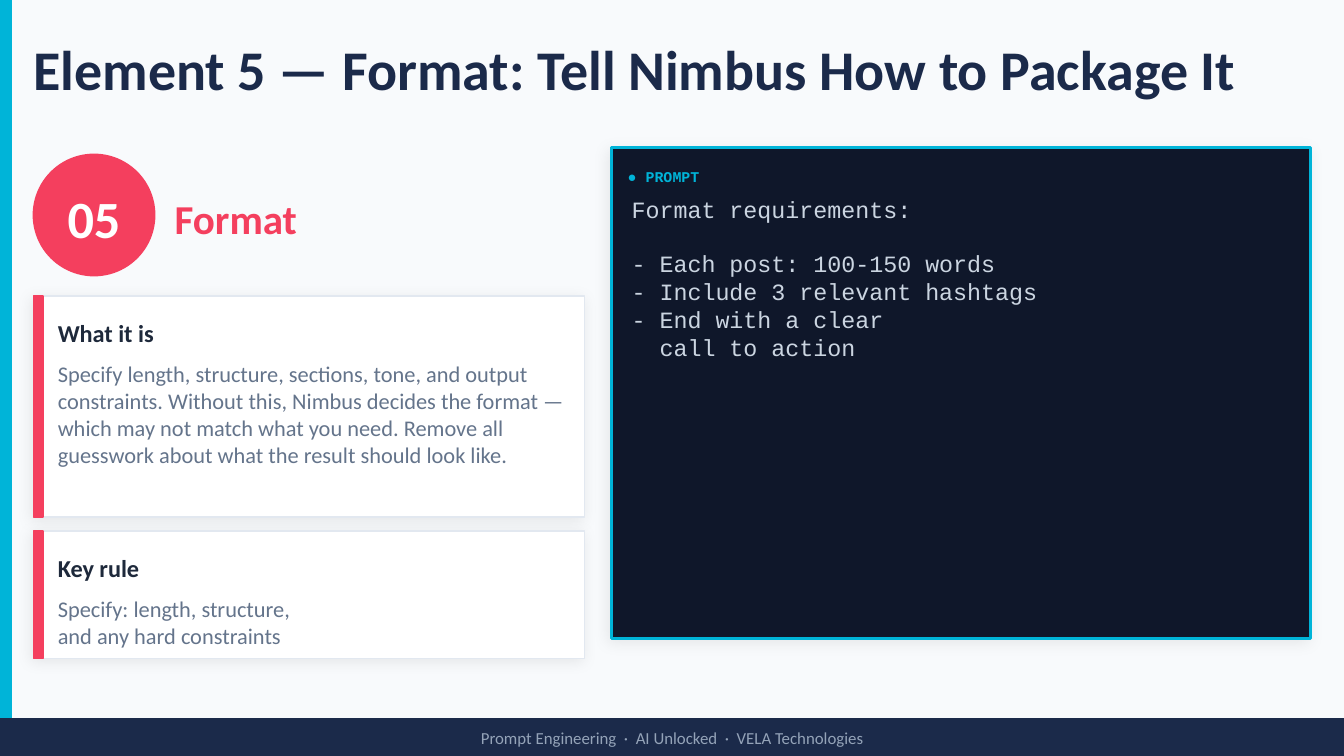
from lxml.etree import SubElement as Sub
from pptx import Presentation
from pptx.dml.color import RGBColor
from pptx.enum.shapes import MSO_SHAPE as Kind
from pptx.enum.text import MSO_ANCHOR as Anchor, PP_ALIGN as Align
from pptx.oxml.ns import qn
from pptx.util import Pt

TITLE = "Element 5 — Format: Tell Nimbus How to Package It"
NUMBER = "05"
NAME = "Format"
CARDS = [
    ("What it is", 118.8, [
        "Specify length, structure, sections, tone, and output constraints. "
        "Without this, Nimbus decides the format — which may not match what "
        "you need. Remove all guesswork about what the result should look like.",
    ]),
    ("Key rule", 68.4, [
        "Specify: length, structure,",
        "and any hard constraints",
    ]),
]
LABEL = "● PROMPT"
PROMPT = [
    "Format requirements:",
    "- Each post: 100-150 words",
    "- Include 3 relevant hashtags",
    "- End with a clear",
    "  call to action",
]
FOOTER = "Prompt Engineering  ·  AI Unlocked  ·  VELA Technologies"

PAPER = RGBColor(0xF8, 0xFA, 0xFC)
WHITE = RGBColor(0xFF, 0xFF, 0xFF)
NAVY = RGBColor(0x1B, 0x2A, 0x4A)
CYAN = RGBColor(0x00, 0xB4, 0xD8)
ROSE = RGBColor(0xF4, 0x3F, 0x5E)
EDGE = RGBColor(0xE2, 0xE8, 0xF0)
INK = RGBColor(0x1E, 0x29, 0x3B)
SLATE = RGBColor(0x64, 0x74, 0x8B)
NIGHT = RGBColor(0x0F, 0x17, 0x2A)
MIST = RGBColor(0xCB, 0xD5, 0xE1)
GREY = RGBColor(0x94, 0xA3, 0xB8)

SANS = "Calibri"
MONO = "Courier New"
WIDE, HIGH = 720, 405
LEFT = 18
FOOT = 385.2
CARD_TOP, CARD_WIDE, CARD_GAP = 158.4, 295.2, 7.2
TEXT_LEFT, TEXT_WIDE = 30.96, 277.2
BLANK_LINE = 14.16

deck = Presentation()
deck.slide_width, deck.slide_height = Pt(WIDE), Pt(HIGH)
slide = deck.slides.add_slide(deck.slide_layouts[6])
slide.background.fill.solid()
slide.background.fill.fore_color.rgb = PAPER


def add_block(box, fill, edge=None, weight=1, kind=Kind.RECTANGLE, shade=False):
    shape = slide.shapes.add_shape(kind, *map(Pt, box))
    shape.fill.solid()
    shape.fill.fore_color.rgb = fill
    shape.line.color.rgb = edge or fill
    shape.line.width = Pt(weight)
    shape.shadow.inherit = False
    if shade:
        effects = shape._element.spPr.find(qn("a:effectLst"))
        outer = Sub(effects, qn("a:outerShdw"), blurRad=str(Pt(8)),
                    dist=str(Pt(2)), dir="8100000", algn="bl", rotWithShape="0")
        tint = Sub(outer, qn("a:srgbClr"), val="000000")
        Sub(tint, qn("a:alpha"), val="8000")


def add_text(box, lines, size, color, bold=False, face=SANS,
             anchor=Anchor.MIDDLE, align=Align.LEFT):
    frame = slide.shapes.add_textbox(*map(Pt, box)).text_frame
    frame.word_wrap = True
    frame.vertical_anchor = anchor
    frame.margin_left = frame.margin_right = 0
    frame.margin_top = frame.margin_bottom = 0
    frame.text = "\n".join(lines)
    for para in frame.paragraphs:
        para.alignment = align
        for run in para.runs:
            font = run.font
            font.name, font.size, font.bold = face, Pt(size), bold
            font.color.rgb = color
    return frame


add_block((0, 0, 5.76, FOOT), CYAN)
add_text((LEFT, 8.64, 684, 56.16), [TITLE], 30, NAVY, bold=True)

add_block((LEFT, 82.8, 64.8, 64.8), ROSE, kind=Kind.OVAL)
add_text((LEFT, 84.24, 64.8, 64.8), [NUMBER], 28, WHITE, bold=True,
         align=Align.CENTER)
add_text((93.6, 87.84, 201.6, 57.6), [NAME], 22, ROSE, bold=True)

top = CARD_TOP
for head, tall, body in CARDS:
    add_block((LEFT, top, CARD_WIDE, tall), WHITE, EDGE, shade=True)
    add_block((LEFT, top, 5.04, tall), ROSE)
    add_text((TEXT_LEFT, top + 7.2, TEXT_WIDE, 25.2), [head], 13, INK, bold=True)
    add_text((TEXT_LEFT, top + 34.56, TEXT_WIDE, tall - 41.76), body, 12, SLATE,
             anchor=Anchor.TOP)
    top += tall + CARD_GAP

add_block((327.6, 79.2, 374.4, 262.8), NIGHT, CYAN, weight=1.5, shade=True)
add_text((336.24, 86.4, 144, 15.84), [LABEL], 8, CYAN, bold=True, face=MONO)
prompt = add_text((338.4, 104.4, 352.8, 230.4), PROMPT, 12.5, MIST, face=MONO,
                  anchor=Anchor.TOP)
prompt.paragraphs[1].space_before = Pt(BLANK_LINE)

strip = (0, FOOT, WIDE, HIGH - FOOT)
add_block(strip, NAVY)
add_text(strip, [FOOTER], 9, GREY, align=Align.CENTER)

deck.save("out.pptx")
